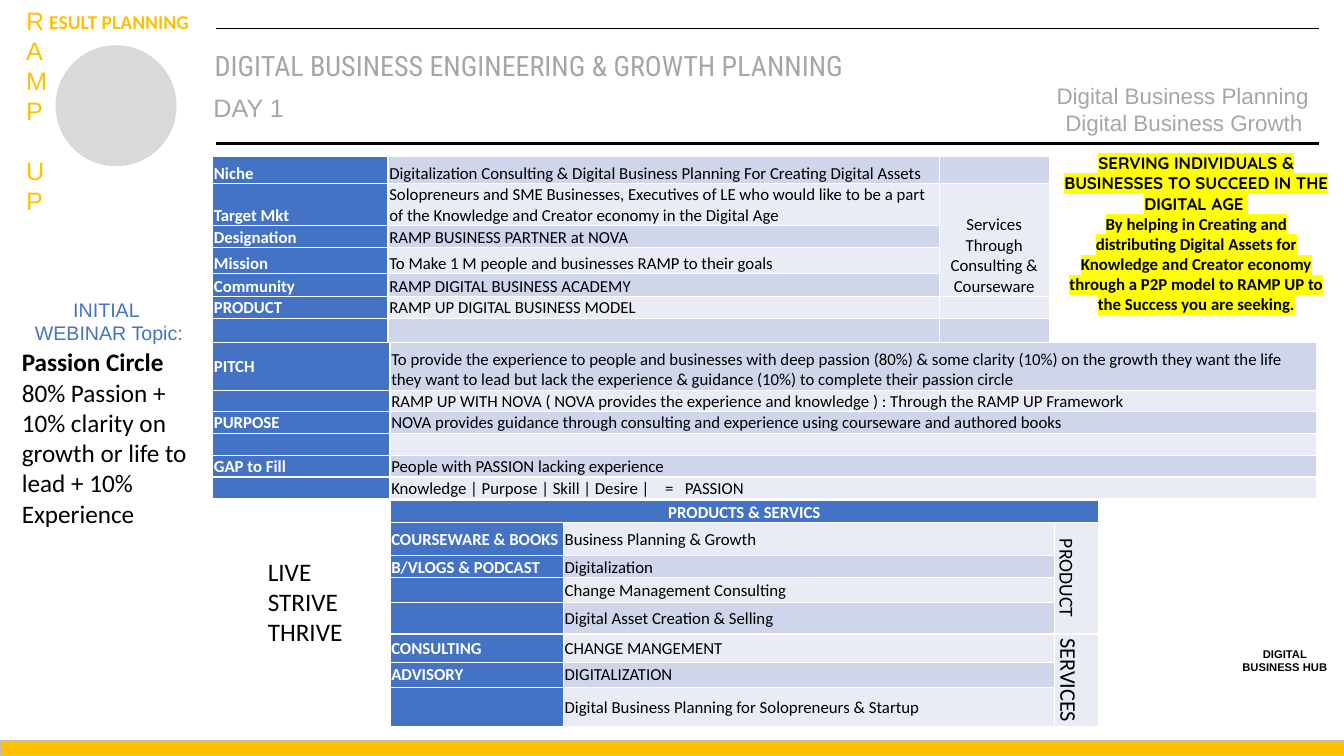
from dataclasses import dataclass
from typing import Optional

import lxml.etree
import pptx
import pptx.dml.color
import pptx.enum.shapes
import pptx.enum.text
import pptx.oxml.ns
import pptx.util

Cm, Pt = pptx.util.Cm, pptx.util.Pt
RGBColor = pptx.dml.color.RGBColor
qn = pptx.oxml.ns.qn
ALIGN = pptx.enum.text.PP_ALIGN
ANCHOR = pptx.enum.text.MSO_ANCHOR
SHAPE = pptx.enum.shapes.MSO_SHAPE

BLACK = RGBColor(0x00, 0x00, 0x00)
WHITE = RGBColor(0xFF, 0xFF, 0xFF)
GOLD = RGBColor(0xFF, 0xC0, 0x00)
BLUE = RGBColor(0x44, 0x72, 0xC4)
GRAY = RGBColor(0xA6, 0xA6, 0xA6)
SILVER = RGBColor(0xBF, 0xBF, 0xBF)
PALE = RGBColor(0xD9, 0xD9, 0xD9)
YELLOW = RGBColor(0xFF, 0xFF, 0x00)
BANDS = (RGBColor(0xCF, 0xD5, 0xEA), RGBColor(0xE9, 0xEB, 0xF5))


@dataclass
class Line:
    text: str
    size: float
    font: str = "Calibri"
    color: RGBColor = BLACK
    bold: bool = False
    align: ALIGN = ALIGN.LEFT
    before: float = 0
    highlight: Optional[RGBColor] = None


@dataclass
class Box:
    left: float
    top: float
    width: float
    height: float
    lines: list[Line]
    wrap: bool = True
    anchor: ANCHOR = ANCHOR.TOP


@dataclass
class Span:
    """A cell merged over several rows or columns."""
    row: int
    column: int
    last_row: int
    last_column: int
    line: Line
    vertical: bool = False


@dataclass
class Grid:
    left: float
    top: float
    columns: list[float]
    rows: list[float]
    texts: list[tuple[str, str]]
    label_anchor: ANCHOR
    body_anchor: ANCHOR
    spans: list[Span]


def write_line(paragraph, line: Line) -> None:
    paragraph.alignment = line.align
    if line.before:
        paragraph.space_before = Pt(line.before)
    if "\t" in line.text:
        tabs = lxml.etree.SubElement(paragraph._p.get_or_add_pPr(), qn("a:tabLst"))
        for position in (6.9, 7.4):
            lxml.etree.SubElement(tabs, qn("a:tab"), pos=str(Cm(position)), algn="l")
    font = paragraph.font
    font.size, font.name, font.bold = Pt(line.size), line.font, line.bold
    font.color.rgb = line.color
    if not line.text:
        lxml.etree.SubElement(paragraph._p, qn("a:endParaRPr"), sz=str(int(line.size * 100)))
        return
    run = paragraph.add_run()
    run.text = line.text
    if line.highlight is not None:
        mark = lxml.etree.SubElement(run._r.get_or_add_rPr(), qn("a:highlight"))
        lxml.etree.SubElement(mark, qn("a:srgbClr"), val=str(line.highlight))


def add_box(slide, box: Box) -> None:
    shape = slide.shapes.add_textbox(Cm(box.left), Cm(box.top), Cm(box.width), Cm(box.height))
    frame = shape.text_frame
    frame.word_wrap = box.wrap
    frame.vertical_anchor = box.anchor
    for index, line in enumerate(box.lines):
        write_line(frame.add_paragraph() if index else frame.paragraphs[0], line)


def fill_cell(cell, line: Line, color: RGBColor, anchor: ANCHOR) -> None:
    cell.fill.solid()
    cell.fill.fore_color.rgb = color
    cell.vertical_anchor = anchor
    cell.margin_left = cell.margin_right = cell.margin_top = Cm(0.03)
    cell.margin_bottom = 0
    write_line(cell.text_frame.paragraphs[0], line)


def add_grid(slide, grid: Grid) -> None:
    table = slide.shapes.add_table(
        len(grid.rows), len(grid.columns), Cm(grid.left), Cm(grid.top),
        Cm(sum(grid.columns)), Cm(sum(grid.rows))).table
    table.first_row = table.horz_banding = False
    for column, width in zip(table.columns, grid.columns):
        column.width = Cm(width)
    for row, height in zip(table.rows, grid.rows):
        row.height = Cm(height)
    spans = {(span.row, span.column): span for span in grid.spans}
    for row, texts in enumerate(grid.texts):
        for column in range(len(grid.columns)):
            cell = table.cell(row, column)
            span = spans.get((row, column))
            label = column == 0
            color = BLUE if label else BANDS[row % 2]
            if span:
                cell.merge(table.cell(span.last_row, span.last_column))
                fill_cell(cell, span.line, color, ANCHOR.BOTTOM)
                if span.vertical:
                    cell._tc.get_or_add_tcPr().set("vert", "vert")
            else:
                text = texts[column] if column < len(texts) else ""
                line = Line(text, 12, color=WHITE if label else BLACK, bold=label)
                fill_cell(cell, line, color, grid.label_anchor if label else grid.body_anchor)


def add_rule(slide, top: float, weight: float) -> None:
    rule = slide.shapes.add_connector(
        pptx.enum.shapes.MSO_CONNECTOR.STRAIGHT, Cm(5.44), Cm(top), Cm(33.25), Cm(top))
    rule.line.color.rgb = BLACK
    rule.line.width = Pt(weight)
    lxml.etree.SubElement(rule._element.spPr, qn("a:effectLst"))


def add_plain_shape(slide, kind: SHAPE, left: float, top: float, width: float, height: float,
                    color: RGBColor):
    shape = slide.shapes.add_shape(kind, Cm(left), Cm(top), Cm(width), Cm(height))
    shape.shadow.inherit = False
    shape.fill.solid()
    shape.fill.fore_color.rgb = color
    shape.line.fill.background()
    return shape


BOXES = [
    Box(0.41, 0, 0.89, 5.64, [Line("RAMP", 18, "Arial", GOLD, align=ALIGN.RIGHT),
                              Line("UP", 18, "Arial", GOLD, align=ALIGN.CENTER, before=21)]),
    Box(0.99, 0.13, 4.06, 0.86, [Line("ESULT PLANNING", 14, color=GOLD, bold=True)], wrap=False),
    Box(5.13, 2.21, 3.02, 1.02, [Line("DAY 1", 18, "Arial", GRAY)]),
    Box(5.16, 1.09, 28.07, 2.49, [
        Line("DIGITAL BUSINESS ENGINEERING & GROWTH PLANNING", 20, "Roboto Condensed", GRAY),
        Line("Digital Business Planning", 16, "Arial", GRAY, align=ALIGN.RIGHT),
        Line("Digital Business Growth ", 16, "Arial", GRAY, align=ALIGN.RIGHT)],
        anchor=ANCHOR.MIDDLE),
    Box(31.01, 16.18, 2.74, 2.87, [
        Line("DIGITAL BUSINESS HUB", 8, "Arial", bold=True, align=ALIGN.CENTER)]),
    Box(6.5, 13.89, 2.41, 3.33, [Line(word, 18) for word in ("LIVE", "STRIVE", "THRIVE")],
        wrap=False),
    Box(26.57, 3.73, 7.16, 4.88, [
        Line("SERVING INDIVIDUALS & BUSINESSES TO SUCCEED IN THE DIGITAL AGE ", 12, "Quicksand",
             bold=True, align=ALIGN.CENTER, highlight=YELLOW),
        Line("By helping in Creating and distributing Digital Assets for Knowledge and Creator "
             "economy through a P2P model to RAMP UP to the Success you are seeking.", 12,
             bold=True, align=ALIGN.CENTER, highlight=YELLOW)]),
    Box(0.3, 8.61, 4.72, 4.88, [
        Line("Passion Circle", 18, bold=True),
        Line("80% Passion + 10% clarity on growth or life to lead + 10% Experience", 18)]),
    Box(0.23, 7.37, 5.03, 1.45, [Line(text, 14, "Arial", BLUE, align=ALIGN.CENTER)
                                 for text in ("INITIAL ", "WEBINAR Topic:")], wrap=False),
]

GRIDS = [
    Grid(5.36, 3.94, [4.42, 13.89, 2.77], [0.69, 1.04, 0.53, 0.66, 0.58, 0.53, 0.84], [
        ("Niche", "Digitalization Consulting & Digital Business Planning For Creating Digital Assets"),
        ("Target Mkt", "Solopreneurs and SME Businesses, Executives of LE who would like to be a part "
                       "of the Knowledge and Creator economy in the Digital Age"),
        ("Designation", "RAMP BUSINESS PARTNER at NOVA"),
        ("Mission", "To Make 1 M people and businesses RAMP to their goals"),
        ("Community", "RAMP DIGITAL BUSINESS ACADEMY"),
        ("PRODUCT", "RAMP UP DIGITAL BUSINESS MODEL"),
        ("", "")], ANCHOR.BOTTOM, ANCHOR.BOTTOM,
        [Span(1, 2, 4, 2, Line("Services Through Consulting & Courseware", 12, align=ALIGN.CENTER))]),
    Grid(5.36, 8.64, [4.47, 23.34], [1.19] + [0.53] * 5, [
        ("PITCH", "To provide the experience to people and businesses with deep passion (80%) & some "
                  "clarity (10%) on the growth they want the life they want to lead but lack the "
                  "experience & guidance (10%) to complete their passion circle"),
        ("", "RAMP UP WITH NOVA ( NOVA provides the experience and knowledge ) : "
             "Through the RAMP UP Framework"),
        ("PURPOSE", "NOVA provides guidance through consulting and experience using courseware "
                    "and authored books"),
        ("", ""),
        ("GAP to Fill", "People with PASSION lacking experience"),
        ("", "Knowledge | Purpose | Skill | Desire |\t=\tPASSION")], ANCHOR.MIDDLE, ANCHOR.BOTTOM, []),
    Grid(9.83, 12.62, [4.37, 12.37, 1.12], [0.53, 0.84, 0.53, 0.63, 0.79, 0.71, 0.63, 0.99], [
        ("", ""),
        ("COURSEWARE & BOOKS", "Business Planning & Growth"),
        ("B/VLOGS & PODCAST", "Digitalization"),
        ("", "Change Management Consulting"),
        ("", "Digital Asset Creation & Selling"),
        ("CONSULTING", "CHANGE MANGEMENT"),
        ("ADVISORY", "DIGITALIZATION"),
        ("", "Digital Business Planning for Solopreneurs & Startup")], ANCHOR.MIDDLE, ANCHOR.MIDDLE,
        [Span(0, 0, 0, 2, Line("PRODUCTS & SERVICS", 12, color=WHITE, bold=True, align=ALIGN.CENTER)),
         Span(1, 2, 4, 2, Line("PRODUCT", 14, align=ALIGN.CENTER), vertical=True),
         Span(5, 2, 7, 2, Line("SERVICES", 16, align=ALIGN.CENTER), vertical=True)]),
]


def main() -> None:
    presentation = pptx.Presentation()
    presentation.slide_width, presentation.slide_height = Cm(33.87), Cm(19.05)
    slide = presentation.slides.add_slide(presentation.slide_layouts[6])
    # Circle, rules and bottom bar
    add_plain_shape(slide, SHAPE.OVAL, 1.4, 1.14, 3.05, 3.05, PALE)
    add_rule(slide, 3.61, 2.5)
    add_rule(slide, 0.71, 0.5)
    bar = add_plain_shape(slide, SHAPE.RECTANGLE, 0, 18.67, 33.87, 0.38, GOLD)
    bar.line.color.rgb = SILVER
    bar.line.width = Pt(1)
    # Tables and texts
    for grid in GRIDS:
        add_grid(slide, grid)
    for box in BOXES:
        add_box(slide, box)
    presentation.save("out.pptx")


if __name__ == "__main__":
    main()
